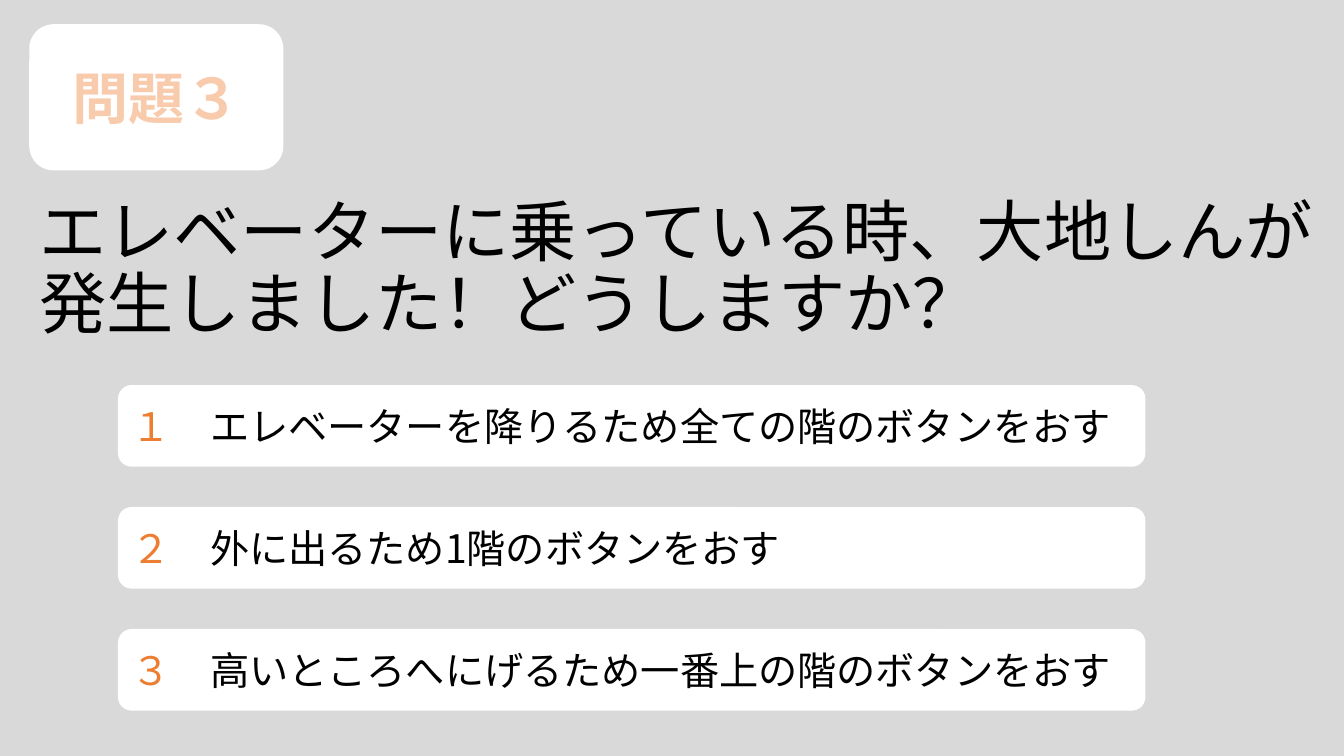
from lxml.etree import SubElement
from pptx import Presentation
from pptx.dml.color import RGBColor
from pptx.enum.shapes import MSO_SHAPE
from pptx.enum.text import MSO_ANCHOR, PP_ALIGN
from pptx.oxml import parse_xml
from pptx.oxml.ns import nsdecls, qn
from pptx.util import Inches, Pt

FONT = "Noto Sans CJK JP"
BLACK, WHITE, GREY = "000000", "FFFFFF", "D9D9D9"
ORANGE, PEACH = "ED7D31", "F8CBAD"
QUESTION = "エレベーターに乗っている時、大地しんが発生しました！どうしますか？"
ANSWERS = [
    ("１", "エレベーターを降りるため全ての階のボタンをおす"),
    ("２", "外に出るため1階のボタンをおす"),
    ("３", "高いところへにげるため一番上の階のボタンをおす"),
]


def paint(color_format, color):
    color_format.rgb = RGBColor.from_string(color)


def fill_solid(fill, color):
    fill.solid()
    paint(fill.fore_color, color)


def add_span(para, text, size, color, bold=False, outline=None):
    """Add a run; outline is the width in points of an orange letter edge."""
    span = para.add_run()
    span.text = text
    span.font.size = Pt(size)
    span.font.bold = bold
    span.font.name = FONT
    paint(span.font.color, color)
    properties = span.font._element
    SubElement(properties, qn("a:ea")).set("typeface", FONT)
    if outline:
        properties.insert(0, parse_xml(
            f'<a:ln {nsdecls("a")} w="{Pt(outline)}"><a:solidFill>'
            f'<a:srgbClr val="{ORANGE}"/></a:solidFill></a:ln>'))


def place_title(page, text):
    title = page.shapes.title
    title.left, title.top = Inches(0.29), Inches(1.96)
    title.width, title.height = Inches(12.96), Inches(1.45)
    title.text_frame.word_wrap = True
    title.text_frame.vertical_anchor = MSO_ANCHOR.MIDDLE
    para = title.text_frame.paragraphs[0]
    para.alignment = PP_ALIGN.LEFT
    para.line_spacing = 0.9
    add_span(para, text, 48, BLACK)


def add_card(page, left, top, width, height, alignment):
    """Add a white rounded box and return its paragraph."""
    box = page.shapes.add_shape(
        MSO_SHAPE.ROUNDED_RECTANGLE,
        Inches(left), Inches(top), Inches(width), Inches(height))
    box.shadow.inherit = False
    fill_solid(box.fill, WHITE)
    box.line.fill.background()
    box.text_frame.word_wrap = True
    box.text_frame.vertical_anchor = MSO_ANCHOR.MIDDLE
    para = box.text_frame.paragraphs[0]
    para.alignment = alignment
    return para


def main():
    deck = Presentation()
    deck.slide_width, deck.slide_height = Inches(13.33), Inches(7.5)
    page = deck.slides.add_slide(deck.slide_layouts[5])
    fill_solid(page.background.fill, GREY)

    place_title(page, QUESTION)
    label = add_card(page, 0.29, 0.24, 2.52, 1.45, PP_ALIGN.CENTER)
    add_span(label, "問題３", 40, PEACH, bold=True, outline=1.75)

    for row, (number, answer) in enumerate(ANSWERS):
        para = add_card(page, 1.17, 3.82 + 1.21 * row, 10.19, 0.81, PP_ALIGN.LEFT)
        add_span(para, number + "　", 28, ORANGE, outline=0.75)
        add_span(para, answer, 28, BLACK)

    deck.save("out.pptx")


if __name__ == "__main__":
    main()
